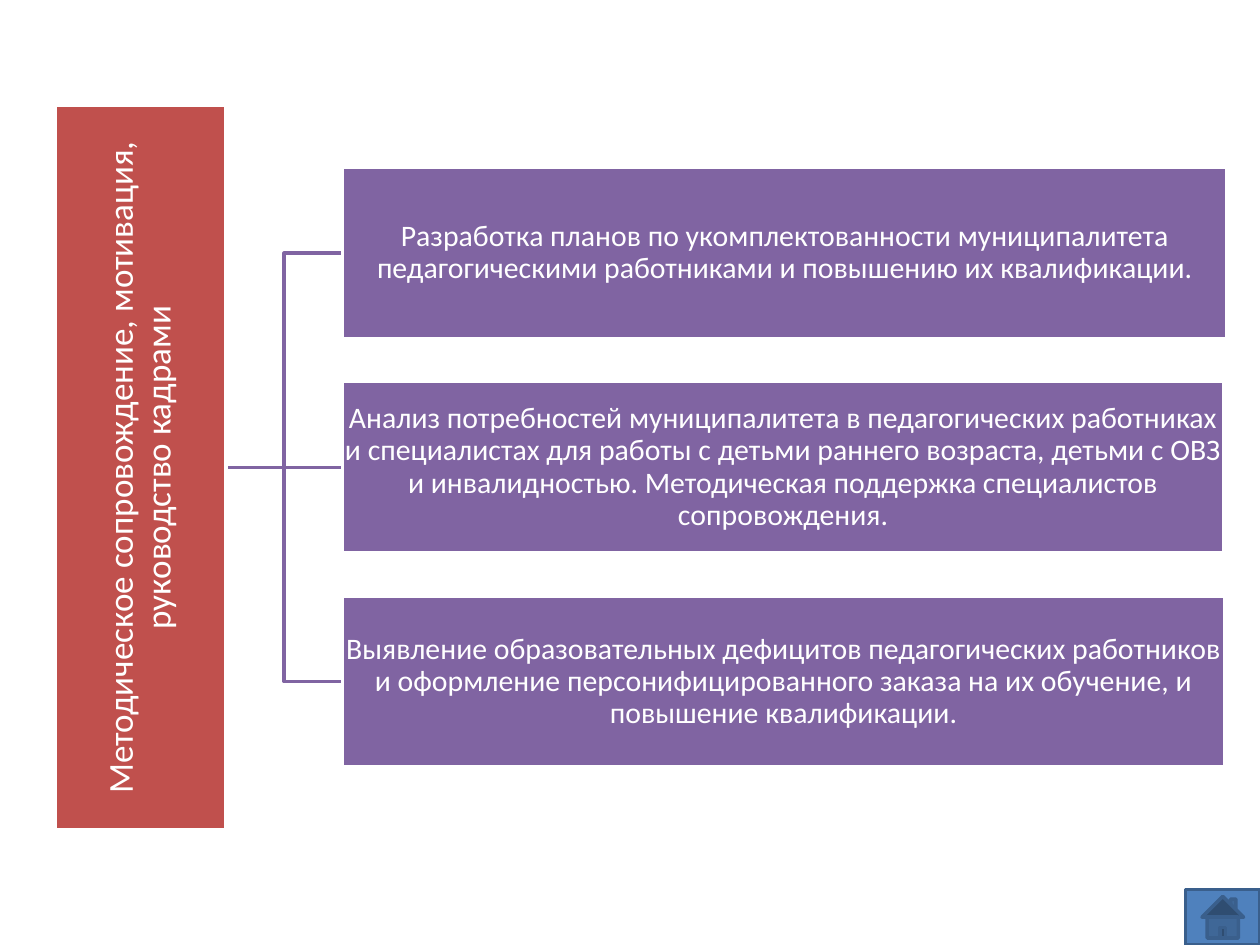
from dataclasses import dataclass

from lxml import etree
from pptx import Presentation
from pptx.dml.color import RGBColor
from pptx.enum.shapes import MSO_CONNECTOR, MSO_SHAPE
from pptx.enum.text import MSO_ANCHOR, PP_ALIGN
from pptx.oxml.ns import qn
from pptx.util import Inches, Pt

RECTANGLE = MSO_SHAPE.RECTANGLE
HOME_BUTTON = MSO_SHAPE.ACTION_BUTTON_HOME
ELBOW, STRAIGHT = MSO_CONNECTOR.ELBOW, MSO_CONNECTOR.STRAIGHT
CENTER, MIDDLE = PP_ALIGN.CENTER, MSO_ANCHOR.MIDDLE

FONT = "Calibri"
WHITE, RED, PURPLE = "FFFFFF", "C0504D", "8064A2"
BUTTON_BLUE, BUTTON_EDGE = "4F81BD", "3A5F8C"
LINE_WIDTH = Pt(2)

# Tree geometry in inches
CENTER_Y = 3.71
BOX_HEIGHT = 1.36
BRANCH_STEP = 1.7
TRUNK_X, BRANCH_X = 1.79, 2.72


@dataclass
class Box:
    left: float
    top: float
    width: float
    height: float
    fill: str
    edge: str = WHITE
    text: str = ""
    size: int = 17
    rotation: int = 0


@dataclass
class Branch:
    width: float
    text: str


BRANCHES = [
    Branch(7.02, "Разработка планов по укомплектованности муниципалитета "
                 "педагогическими работниками и повышению их квалификации."),
    Branch(6.99, "Анализ потребностей муниципалитета в педагогических работниках "
                 "и специалистах для работы с детьми раннего возраста, детьми с ОВЗ "
                 "и инвалидностью. Методическая поддержка специалистов сопровождения."),
    Branch(7, "Выявление образовательных дефицитов педагогических работников "
              "и оформление персонифицированного заказа на их обучение, "
              "и повышение квалификации."),
]


def color(value: str) -> RGBColor:
    return RGBColor.from_string(value)


def draw_box(slide, box: Box, kind=RECTANGLE) -> None:
    shape = slide.shapes.add_shape(kind, Inches(box.left), Inches(box.top),
                                   Inches(box.width), Inches(box.height))
    shape.shadow.inherit = False
    shape.rotation = box.rotation
    shape.fill.solid()
    shape.fill.fore_color.rgb = color(box.fill)
    shape.line.color.rgb = color(box.edge)
    shape.line.width = LINE_WIDTH
    if not box.text:
        return
    frame = shape.text_frame
    frame.word_wrap = True
    frame.vertical_anchor = MIDDLE
    frame.margin_left = frame.margin_right = Inches(0.01)
    frame.margin_top = frame.margin_bottom = Inches(0.01)
    paragraph = frame.paragraphs[0]
    paragraph.text = box.text
    paragraph.alignment = CENTER
    paragraph.line_spacing = 0.9
    paragraph.font.name = FONT
    paragraph.font.size = Pt(box.size)
    paragraph.font.color.rgb = color(WHITE)


def draw_link(slide, end_y: float) -> None:
    kind = STRAIGHT if end_y == CENTER_Y else ELBOW
    link = slide.shapes.add_connector(kind, Inches(TRUNK_X), Inches(CENTER_Y),
                                      Inches(BRANCH_X), Inches(end_y))
    link.line.color.rgb = color(PURPLE)
    link.line.width = LINE_WIDTH
    etree.SubElement(link._element.spPr, qn("a:effectLst"))


def main() -> None:
    prs = Presentation()
    prs.slide_width, prs.slide_height = Inches(10), Inches(7.5)
    slide = prs.slides.add_slide(prs.slide_layouts[6])

    # Links from the root to each branch, behind the boxes
    branch_centers = [CENTER_Y + (i - 1) * BRANCH_STEP for i in range(len(BRANCHES))]
    for center in branch_centers:
        draw_link(slide, center)

    # Root, turned to read upwards
    box_top = CENTER_Y - BOX_HEIGHT / 2
    draw_box(slide, Box(-1.76, box_top, 5.75, BOX_HEIGHT, RED, size=20, rotation=270,
                        text="Методическое сопровождение, мотивация, руководство кадрами"))

    # Branches
    for branch, center in zip(BRANCHES, branch_centers):
        draw_box(slide, Box(BRANCH_X, center - BOX_HEIGHT / 2, branch.width,
                            BOX_HEIGHT, PURPLE, text=branch.text))

    # Home button in the corner
    draw_box(slide, Box(9.41, 7.06, 0.59, 0.44, BUTTON_BLUE, BUTTON_EDGE), HOME_BUTTON)

    prs.save("out.pptx")


if __name__ == "__main__":
    main()
